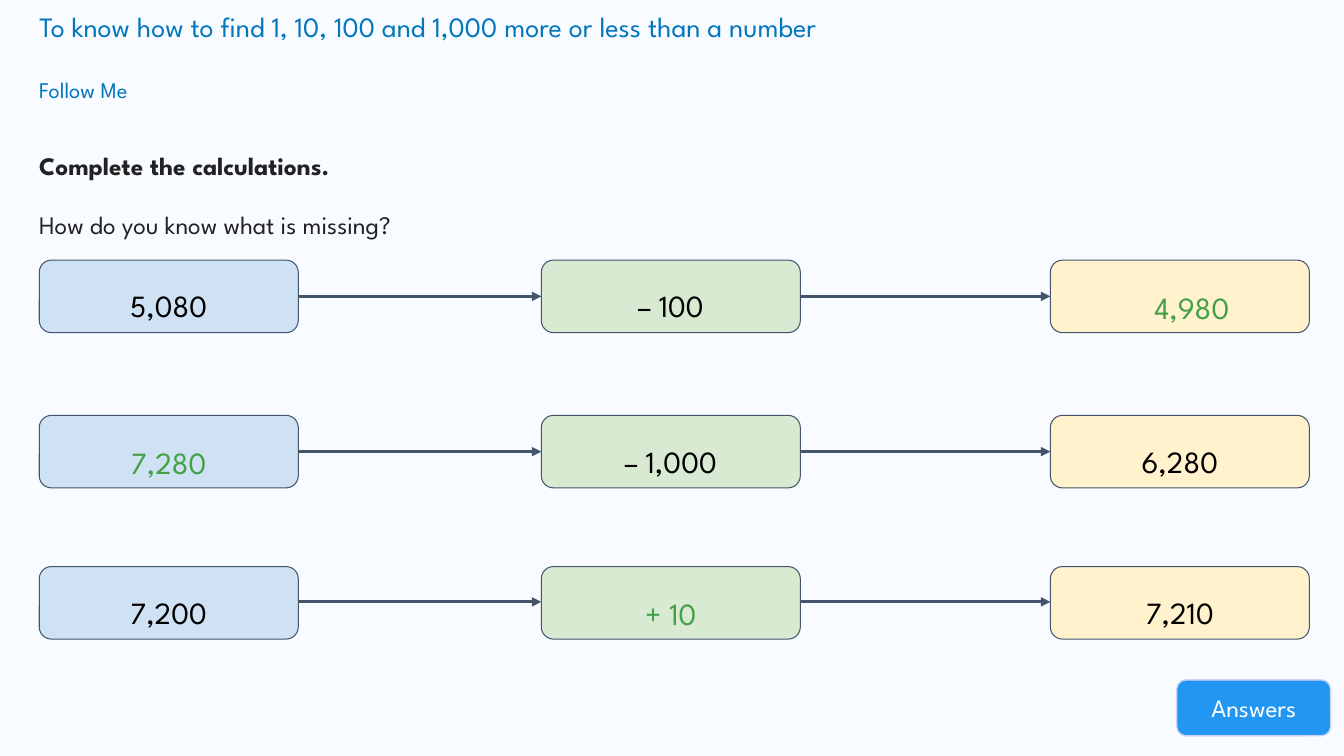
from dataclasses import dataclass

from lxml import etree
from pptx import Presentation
from pptx.dml.color import RGBColor
from pptx.enum.shapes import MSO_CONNECTOR, MSO_SHAPE
from pptx.enum.text import MSO_ANCHOR, MSO_AUTO_SIZE, PP_ALIGN
from pptx.oxml.ns import qn
from pptx.util import Pt

ROUND = MSO_SHAPE.ROUNDED_RECTANGLE
STRAIGHT = MSO_CONNECTOR.STRAIGHT
TOP, MIDDLE = MSO_ANCHOR.TOP, MSO_ANCHOR.MIDDLE
LEFT, CENTER = PP_ALIGN.LEFT, PP_ALIGN.CENTER
FIXED = MSO_AUTO_SIZE.NONE


@dataclass(frozen=True)
class Theme:
    font: str = "League Spartan"
    back: str = "F8FBFF"
    title: str = "0277BD"
    ink: str = "222222"
    black: str = "000000"
    answer: str = "43A047"
    edge: str = "44546A"
    cards: tuple = ("CFE2F3", "D9EAD3", "FFF2CC")
    button: str = "2196F3"
    rim: str = "CCD4F4"
    white: str = "FFFFFF"
    head: int = 20
    label: int = 16
    body: int = 18
    number: int = 22


THEME = Theme()
CARD_W, CARD_H = 185, 51.8
CARD_X = (0, 358.6, 722.2)
# Each row: top, arrow drop, cards, column of the answer, answer inset
ROWS = (
    (0, 25.9, ("5,080", "– 100", "4,980"), 2, 55.4),
    (110.9, 25.9, ("7,280", "– 1,000", "6,280"), 0, 46.8),
    (218.9, 25.2, ("7,200", "+ 10", "7,210"), 1, 46.8),
)


def color(code):
    return RGBColor.from_string(code)


def place(shape, x, y, w, h):
    shape.left, shape.top, shape.width, shape.height = map(Pt, (x, y, w, h))


def write(shape, lines, size, ink, align=LEFT, anchor=TOP, pad=None, space=1.0):
    frame = shape.text_frame
    frame.text = "\n".join(lines)
    frame.word_wrap = True
    frame.auto_size = FIXED
    frame.vertical_anchor = anchor
    if pad is not None:
        frame.margin_left = frame.margin_right = Pt(pad)
        frame.margin_top = frame.margin_bottom = Pt(pad)
    for para in frame.paragraphs:
        para.alignment = align
        para.line_spacing = space
        for run in para.runs:
            run.font.name = THEME.font
            run.font.size = Pt(size)
            run.font.bold = False
            run.font.color.rgb = color(ink)


def add_box(slide, x, y, w, h, fill, edge, width):
    box = slide.shapes.add_shape(ROUND, Pt(x), Pt(y), Pt(w), Pt(h))
    box.shadow.inherit = False
    box.fill.solid()
    box.fill.fore_color.rgb = color(fill)
    box.line.color.rgb = color(edge)
    box.line.width = Pt(width)
    return box


def add_text(slide, x, y, w, h):
    return slide.shapes.add_textbox(Pt(x), Pt(y), Pt(w), Pt(h))


def add_arrow(slide, start, end, y):
    arrow = slide.shapes.add_connector(STRAIGHT, Pt(start), Pt(y), Pt(end), Pt(y))
    arrow.line.color.rgb = color(THEME.edge)
    arrow.line.width = Pt(2.25)
    etree.SubElement(arrow.line._get_or_add_ln(), qn("a:tailEnd"), type="triangle")
    etree.SubElement(arrow._element.spPr, qn("a:effectLst"))


def draw_head(slide, x, y, w):
    title = slide.shapes.title
    place(title, x, y, w, 31.7)
    write(title, ["To know how to find 1, 10, 100 and 1,000 more or less than a number"],
          THEME.head, THEME.title)
    label = add_text(slide, x, y + 48.2, 213.8, 33.1)
    write(label, ["Follow Me"], THEME.label, THEME.title)


def draw_task(slide, x, y, w, h):
    task = add_text(slide, x, y, w, h)
    write(task, ["Complete the calculations.", "How do you know what is missing?"],
          THEME.body, THEME.ink, space=1.5)
    first, second = task.text_frame.paragraphs
    first.runs[0].font.bold = True
    second.space_before = Pt(10)


def draw_row(slide, x, y, drop, cards, gap, inset):
    for col, (left, text) in enumerate(zip(CARD_X, cards)):
        card = add_box(slide, x + left, y, CARD_W, CARD_H, THEME.cards[col], THEME.edge, 0.75)
        ink, anchor = THEME.black, MIDDLE
        if col == gap:
            card = add_text(slide, x + left + inset, y, 91.4, 55.4)
            ink, anchor = THEME.answer, TOP
        write(card, [text], THEME.number, ink, CENTER, anchor, 7.2, 1.5)
    for left, right in zip(CARD_X, CARD_X[1:]):
        add_arrow(slide, x + left + CARD_W, x + right, y + drop)


def draw_grid(slide, x, y):
    for top, drop, cards, gap, inset in ROWS:
        draw_row(slide, x, y + top, drop, cards, gap, inset)


def draw_button(slide, x, y, w, h):
    button = add_box(slide, x, y, w, h, THEME.button, THEME.rim, 1)
    write(button, ["Answers"], THEME.body, THEME.white, CENTER, MIDDLE)


def main():
    deck = Presentation()
    deck.slide_width, deck.slide_height = Pt(960), Pt(540)
    slide = deck.slides.add_slide(deck.slide_layouts[5])
    slide.background.fill.solid()
    slide.background.fill.fore_color.rgb = color(THEME.back)
    # Heading and task
    draw_head(slide, 20.9, 2.9, 888.5)
    draw_task(slide, 20.9, 92.9, 924.5, 85)
    # Calculations and button
    draw_grid(slide, 28.1, 185.8)
    draw_button(slide, 840.5, 485.6, 110, 40)
    deck.save("out.pptx")


if __name__ == "__main__":
    main()
